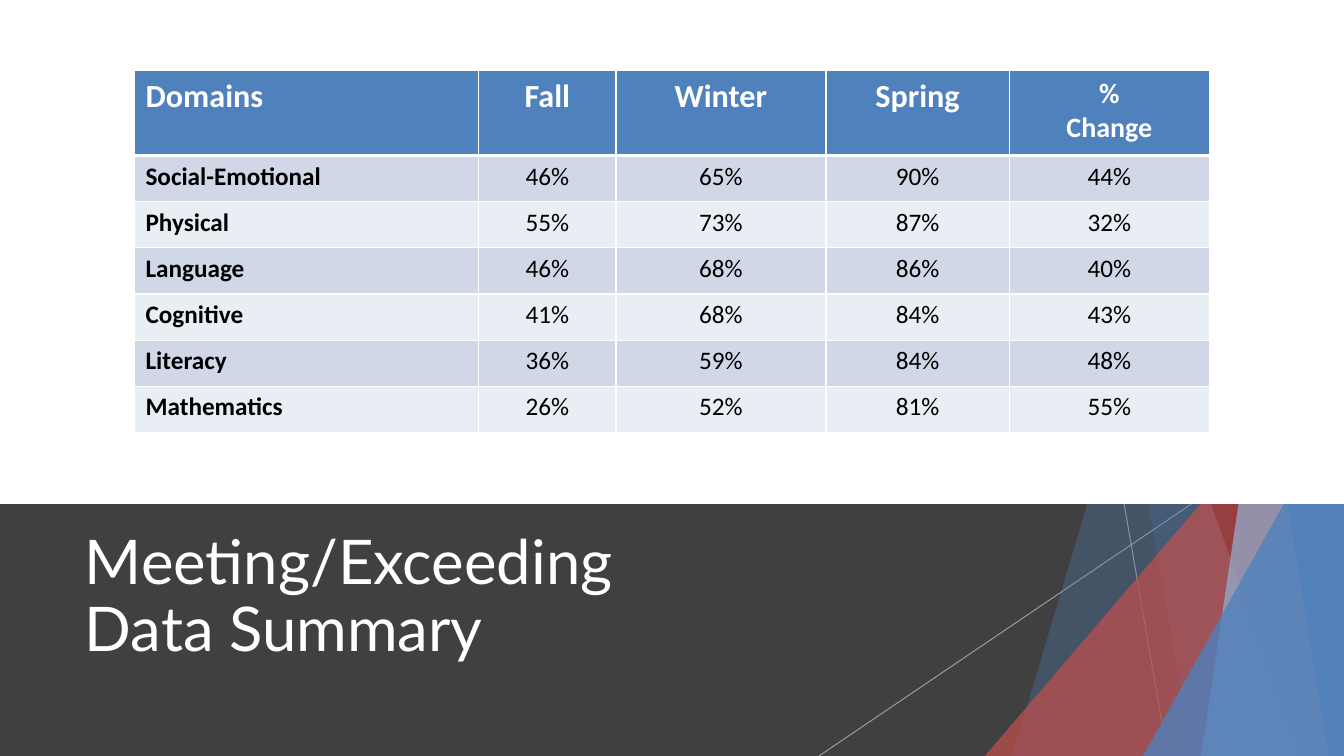
from dataclasses import dataclass

from lxml import etree
from pptx import Presentation
from pptx.dml.color import RGBColor
from pptx.enum.shapes import MSO_CONNECTOR, MSO_SHAPE
from pptx.enum.text import MSO_ANCHOR, PP_ALIGN
from pptx.oxml.ns import qn
from pptx.util import Pt

RECT, TRIANGLE = MSO_SHAPE.RECTANGLE, MSO_SHAPE.ISOSCELES_TRIANGLE
STRAIGHT = MSO_CONNECTOR.STRAIGHT
LEFT, CENTER = PP_ALIGN.LEFT, PP_ALIGN.CENTER
MIDDLE = MSO_ANCHOR.MIDDLE


@dataclass(frozen=True)
class Theme:
    white: str = "FFFFFF"
    black: str = "000000"
    charcoal: str = "404040"
    ray: str = "BFBFBF"
    blue: str = "4F81BD"
    pale_blue: str = "95B3D7"
    red: str = "C0504D"
    dark_red: str = "953735"
    bands: tuple = ("D0D8E8", "E9EDF4")
    title_font: str = "Lato"
    table_font: str = "Calibri"
    title_size: int = 44
    header_size: int = 23
    change_size: int = 20
    body_size: int = 18


T = Theme()
SLIDE_W, SLIDE_H, BAND_TOP = 960, 540, 360

# Offsets from the left of the fan: top-left corner, bottom-left corner
BACK_SHARDS = [(304, 143, T.blue, 30), (176, 272, T.blue, 20)]
FRONT_SHARDS = [(155, 350, T.dark_red, 70), (358, 278, T.pale_blue, 70),
                (281, 369, T.blue, 65)]
# Offsets from the left of the fan: x at the band's top, x at its bottom
RAYS = [(223, 254), (271, 5)]

HEADER = ["Domains", "Fall", "Winter", "Spring", "%\nChange"]
SCORES = [
    ["Social-Emotional", "46%", "65%", "90%", "44%"],
    ["Physical", "55%", "73%", "87%", "32%"],
    ["Language", "46%", "68%", "86%", "40%"],
    ["Cognitive", "41%", "68%", "84%", "43%"],
    ["Literacy", "36%", "59%", "84%", "48%"],
    ["Mathematics", "26%", "52%", "81%", "55%"],
]
COLUMN_SHARES = [246, 98, 150, 131, 143]
HEADER_H = 60.5


def set_alpha(sp, percent):
    for clr in sp._element.spPr.iter(qn("a:srgbClr")):
        etree.SubElement(clr, qn("a:alpha"), val=str(percent * 1000))


def paint(sp, color, alpha=100):
    sp.shadow.inherit = False
    sp.fill.solid()
    sp.fill.fore_color.rgb = RGBColor.from_string(color)
    sp.line.fill.background()
    if alpha < 100:
        set_alpha(sp, alpha)


def style_text(p, font, size, color, bold=False):
    for r in p.runs:
        r.font.name, r.font.size, r.font.bold = font, Pt(size), bold
        r.font.color.rgb = RGBColor.from_string(color)


def add_panel(s, box, color):
    paint(s.shapes.add_shape(RECT, *map(Pt, box)), color)


def add_fan(s, box, band_top):
    """Place overlapping shards and thin rays against the right edge of the box."""
    x, y, w, h = box
    right, bottom = x + w, y + h

    def ray(top_x, bottom_x):
        line = s.shapes.add_connector(STRAIGHT, Pt(x + top_x), Pt(band_top),
                                      Pt(x + bottom_x), Pt(bottom))
        line.line.color.rgb = RGBColor.from_string(T.ray)
        line.line.width = Pt(0.75)
        set_alpha(line, 70)
        etree.SubElement(line._element.spPr, qn("a:effectLst"))

    def shard(top_x, bottom_x, color, alpha):
        path = s.shapes.build_freeform(Pt(x + top_x), Pt(y))
        path.add_line_segments([(Pt(right), Pt(y)), (Pt(right), Pt(bottom)),
                                (Pt(x + bottom_x), Pt(bottom))])
        paint(path.convert_to_shape(), color, alpha)

    def wedge(left, top, color, alpha):
        sp = s.shapes.add_shape(TRIANGLE, Pt(x + left), Pt(y + top),
                                Pt(w - left), Pt(h - top))
        sp.adjustments[0] = 1
        paint(sp, color, alpha)

    for ends in RAYS:
        ray(*ends)
    for item in BACK_SHARDS:
        shard(*item)
    wedge(123.5, 240, T.red, 72)
    for item in FRONT_SHARDS:
        shard(*item)
    wedge(236.5, 283, T.blue, 80)


def add_title(s, box, text):
    tf = s.shapes.add_textbox(*map(Pt, box)).text_frame
    tf.word_wrap, tf.vertical_anchor = True, MIDDLE
    p = tf.paragraphs[0]
    p.text = text
    p.line_spacing = 0.9
    style_text(p, T.title_font, T.title_size, T.white)


def border_cell(cell, top, bottom):
    tcPr = cell._tc.get_or_add_tcPr()
    for side, width in (("L", 1), ("R", 1), ("T", top), ("B", bottom)):
        ln = etree.SubElement(tcPr, qn(f"a:ln{side}"), w=str(Pt(width)))
        fill = etree.SubElement(ln, qn("a:solidFill"))
        etree.SubElement(fill, qn("a:srgbClr"), val=T.white)


def fill_cell(cell, text, row, col):
    header = row == 0
    border_cell(cell, 3 if row == 1 else 1, 3 if header else 1)
    cell.fill.solid()
    cell.fill.fore_color.rgb = RGBColor.from_string(
        T.blue if header else T.bands[(row - 1) % 2])
    cell.margin_left = cell.margin_right = Pt(8)
    cell.margin_top = cell.margin_bottom = Pt(4)
    size = T.body_size
    if header:
        size = T.change_size if "\n" in text else T.header_size
    cell.text_frame.text = text
    for p in cell.text_frame.paragraphs:
        p.alignment = CENTER if col else LEFT
        style_text(p, T.table_font, size, T.white if header else T.black,
                   header or col == 0)


def add_score_table(s, box):
    x, y, w, h = box
    rows = [HEADER] + SCORES
    table = s.shapes.add_table(len(rows), len(HEADER), *map(Pt, box)).table
    for column, share in zip(table.columns, COLUMN_SHARES):
        column.width = Pt(w * share / sum(COLUMN_SHARES))
    for i, values in enumerate(rows):
        table.rows[i].height = Pt((h - HEADER_H) / len(SCORES) if i else HEADER_H)
        for j, text in enumerate(values):
            fill_cell(table.cell(i, j), text, i, j)


def main():
    prs = Presentation()
    prs.slide_width, prs.slide_height = Pt(SLIDE_W), Pt(SLIDE_H)
    s = prs.slides.add_slide(prs.slide_layouts[6])
    add_panel(s, (0, BAND_TOP, SLIDE_W, SLIDE_H - BAND_TOP), T.charcoal)
    add_fan(s, (580, 0, SLIDE_W - 580, SLIDE_H), BAND_TOP)
    add_title(s, (53.5, 375, 677, 104), "Meeting/Exceeding\vData Summary")
    add_panel(s, (0, 0, SLIDE_W, BAND_TOP), T.white)
    add_score_table(s, (96, 50.5, 768, 258.5))
    prs.save("out.pptx")


if __name__ == "__main__":
    main()
